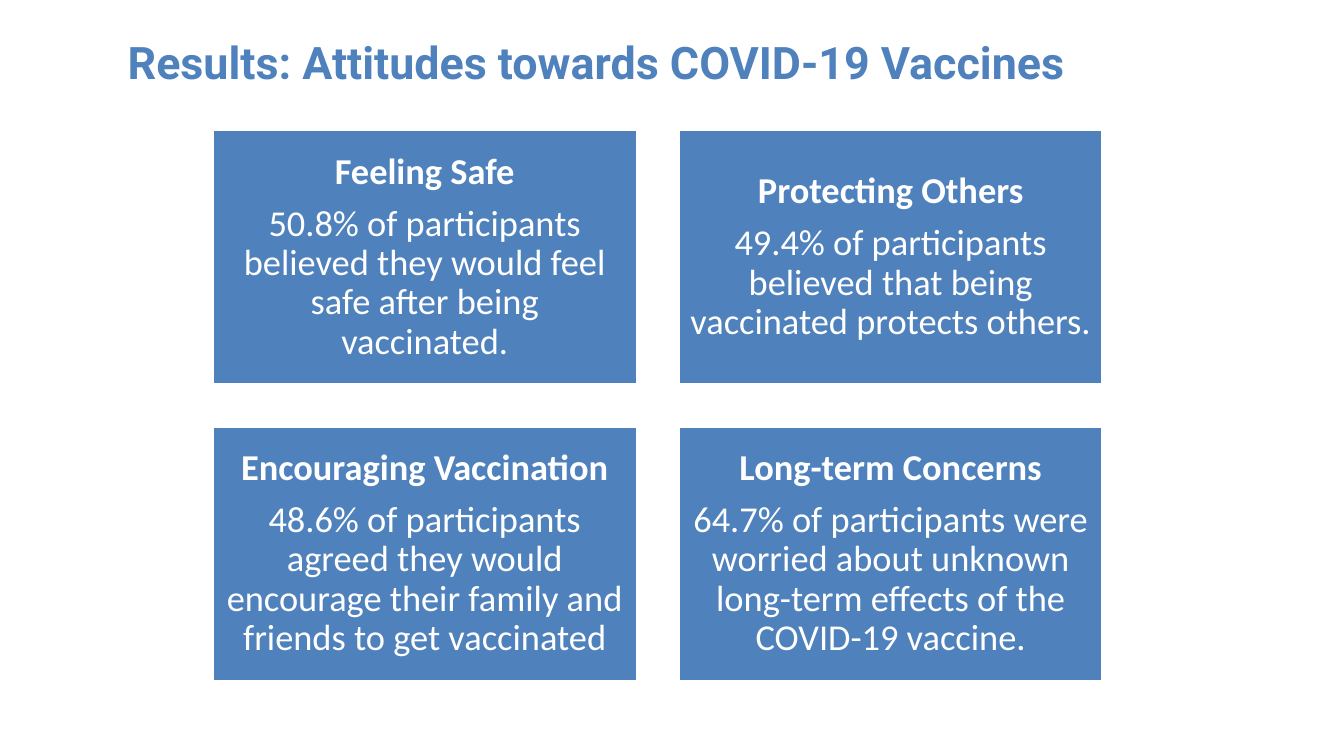
from pptx import Presentation
from pptx.dml.color import RGBColor
from pptx.enum.shapes import MSO_SHAPE
from pptx.enum.text import MSO_ANCHOR, PP_ALIGN
from pptx.util import Pt

RECTANGLE = MSO_SHAPE.RECTANGLE
MIDDLE = MSO_ANCHOR.MIDDLE
CENTER = PP_ALIGN.CENTER
BLUE = "4F81BD"
WHITE = "FFFFFF"
TITLE_FONT = {"name": "Roboto", "size": Pt(48), "bold": True}
HEADING_FONT = {"name": "Calibri", "size": Pt(39), "bold": True}
BODY_FONT = {**HEADING_FONT, "bold": False}
CENTERED = {"alignment": CENTER, "line_spacing": 0.9}
CARD_PARA = {**CENTERED, "space_before": Pt(0), "space_after": Pt(13.65)}
CARD_FRAME = {
    "word_wrap": True, "vertical_anchor": MIDDLE,
    "margin_left": Pt(11.7), "margin_right": Pt(11.7),
    "margin_top": Pt(11.7), "margin_bottom": Pt(11.7),
}
TITLE_FRAME = {"word_wrap": True, "vertical_anchor": MIDDLE}
CARDS = [
    ("Feeling Safe",
     "50.8% of participants believed they would feel safe after being vaccinated."),
    ("Protecting Others",
     "49.4% of participants believed that being vaccinated protects others."),
    ("Encouraging Vaccination",
     "48.6% of participants agreed they would encourage their family and friends to get vaccinated"),
    ("Long-term Concerns",
     "64.7% of participants were worried about unknown long-term effects of the COVID-19 vaccine."),
]


def color(value):
    return RGBColor.from_string(value)


def apply_format(target, values):
    for name, value in values.items():
        setattr(target, name, value)


def write_para(para, text, para_format, font_format, font_color):
    apply_format(para, para_format)
    span = para.add_run()
    span.text = text
    apply_format(span.font, font_format)
    span.font.color.rgb = color(font_color)


def add_title(page, box, text):
    frame = page.shapes.add_textbox(*map(Pt, box)).text_frame
    apply_format(frame, TITLE_FRAME)
    write_para(frame.paragraphs[0], text, CENTERED, TITLE_FONT, BLUE)


def add_card(page, box, heading, body):
    card = page.shapes.add_shape(RECTANGLE, *map(Pt, box))
    card.shadow.inherit = False
    card.fill.solid()
    card.fill.fore_color.rgb = color(BLUE)
    card.line.color.rgb = color(WHITE)
    card.line.width = Pt(2)
    frame = card.text_frame
    apply_format(frame, CARD_FRAME)
    write_para(frame.paragraphs[0], heading, CARD_PARA, HEADING_FONT, WHITE)
    write_para(frame.add_paragraph(), body, CARD_PARA, BODY_FONT, WHITE)


def add_card_grid(page, box, cards, columns=2, gap=45.5):
    left, top, width, height = box
    rows = len(cards) // columns
    card_width = (width - gap * (columns - 1)) / columns
    card_height = (height - gap * (rows - 1)) / rows
    for index, (heading, body) in enumerate(cards):
        row, column = divmod(index, columns)
        card_box = (left + column * (card_width + gap),
                    top + row * (card_height + gap), card_width, card_height)
        add_card(page, card_box, heading, body)


def main():
    deck = Presentation()
    deck.slide_width, deck.slide_height = Pt(1440), Pt(810)
    page = deck.slides.add_slide(deck.slide_layouts[6])
    add_title(page, (18, 3, 1242, 134), "Results: Attitudes towards COVID-19 Vaccines")
    add_card_grid(page, (228.2, 139.7, 953, 589.7), CARDS)
    deck.save("out.pptx")


if __name__ == "__main__":
    main()
